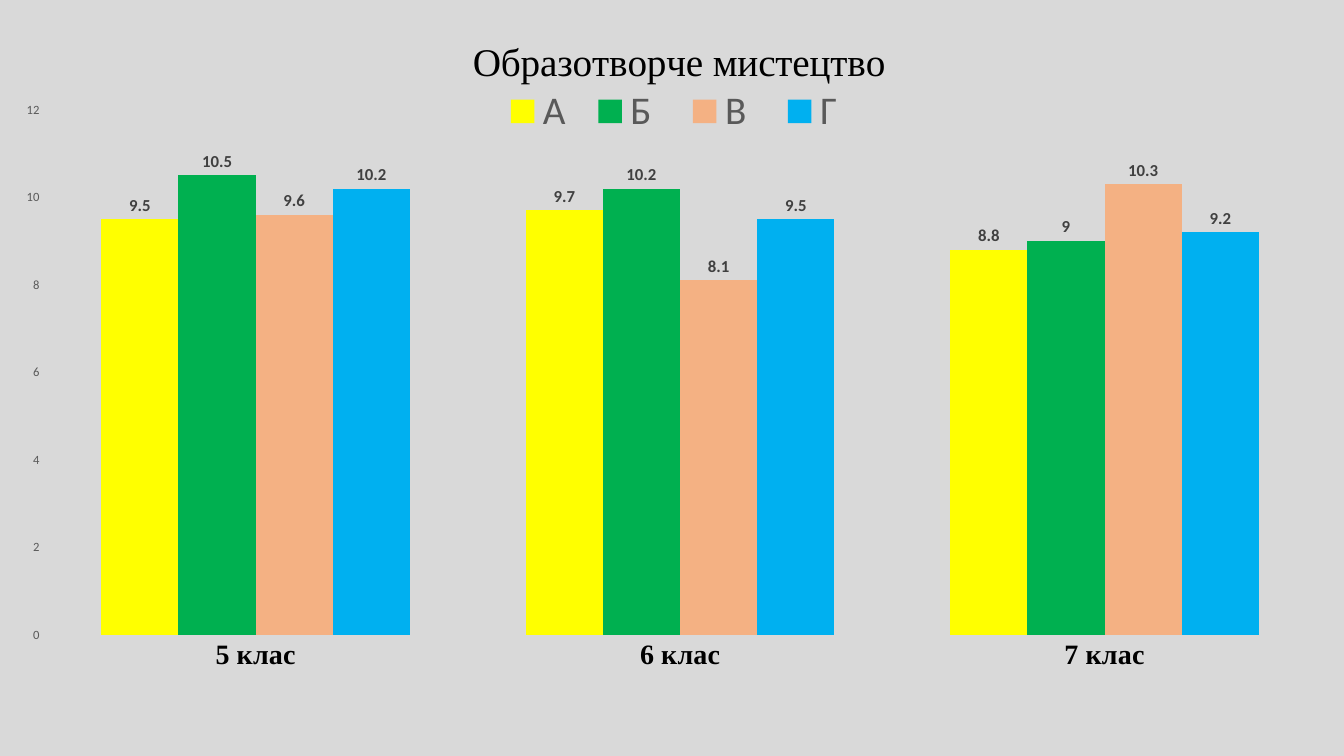
from lxml.etree import SubElement
from pptx import Presentation
from pptx.chart.data import CategoryChartData
from pptx.dml.color import RGBColor
from pptx.enum.chart import (XL_CHART_TYPE, XL_LABEL_POSITION,
                             XL_LEGEND_POSITION, XL_TICK_MARK)
from pptx.oxml import parse_xml
from pptx.oxml.ns import qn
from pptx.util import Inches, Pt

TITLE = "Образотворче мистецтво"
GRADES = ["5 клас", "6 клас", "7 клас"]
CLASSES = [
    ("А", "FFFF00", (9.5, 9.7, 8.8)),
    ("Б ", "00B050", (10.5, 10.2, 9)),
    ("В ", "F4B183", (9.6, 8.1, 10.3)),
    ("Г", "00B0F0", (10.2, 9.5, 9.2)),
]
WIDE, HIGH = 13.33, 7.5
# Left, top, width and height in inches
PLOT = (0.43, 1.09, 12.63, 5.21)
LEGEND = (4.87, 0.87, 3.63, 0.45)
HEAD = (4.62, 0.3)
SERIF, SANS = "Times New Roman", "Calibri"
BACK, INK, GREY, DARK = "D9D9D9", "000000", "595959", "404040"
NS = "http://schemas.openxmlformats.org/drawingml/2006/chart"


def paint(fill, color):
    fill.solid()
    fill.fore_color.rgb = RGBColor.from_string(color)


def style(font, name, size, color, bold=False):
    font.name, font.size, font.bold = name, Pt(size), bold
    paint(font.fill, color)


def place(part, index, box, inner=False):
    """Fix a chart part at a box given in inches."""
    for old in part.findall(qn("c:layout")):
        part.remove(old)
    layout = parse_xml(f'<c:layout xmlns:c="{NS}"><c:manualLayout/></c:layout>')
    manual = layout[0]

    def put(tag, value):
        SubElement(manual, qn("c:" + tag)).set("val", str(value))

    if inner:
        put("layoutTarget", "inner")
    put("xMode", "edge")
    put("yMode", "edge")
    for tag, value, full in zip("xywh", box, (WIDE, HIGH, WIDE, HIGH)):
        put(tag, round(value / full, 4))
    part.insert(index, layout)


deck = Presentation()
deck.slide_width, deck.slide_height = Inches(WIDE), Inches(HIGH)
slide = deck.slides.add_slide(deck.slide_layouts[6])
paint(slide.background.fill, BACK)

data = CategoryChartData()
data.categories = GRADES
for name, _, marks in CLASSES:
    data.add_series(name, marks)
chart = slide.shapes.add_chart(XL_CHART_TYPE.COLUMN_CLUSTERED, 0, 0,
                               Inches(WIDE), Inches(HIGH), data).chart
style(chart.font, SANS, 10, INK)

run = chart.chart_title.text_frame.paragraphs[0].add_run()
run.text = TITLE
style(run.font, SERIF, 28, INK)
place(chart.chart_title._element, 1, HEAD)

chart.has_legend = True
legend = chart.legend
legend.position = XL_LEGEND_POSITION.BOTTOM
legend.include_in_layout = False
style(legend.font, SANS, 28, GREY)
place(legend._element, 1, LEGEND)

for axis, look in ((chart.category_axis, (SERIF, 20, INK, True)),
                   (chart.value_axis, (SANS, 9, GREY))):
    style(axis.tick_labels.font, *look)
    axis.major_tick_mark = axis.minor_tick_mark = XL_TICK_MARK.NONE
    axis.has_major_gridlines = False
    axis.format.line.fill.background()
scale = chart.value_axis
scale.minimum_scale, scale.maximum_scale, scale.major_unit = 0, 12, 2

plot = chart.plots[0]
plot.gap_width, plot.overlap, plot.vary_by_categories = 150, 0, False
place(chart._chartSpace.chart.plotArea, 0, PLOT, inner=True)
for series, (_, color, _) in zip(plot.series, CLASSES):
    paint(series.format.fill, color)
    labels = series.data_labels
    labels.show_value = True
    labels.position = XL_LABEL_POSITION.OUTSIDE_END
    style(labels.font, SANS, 12, DARK, True)

deck.save("out.pptx")
